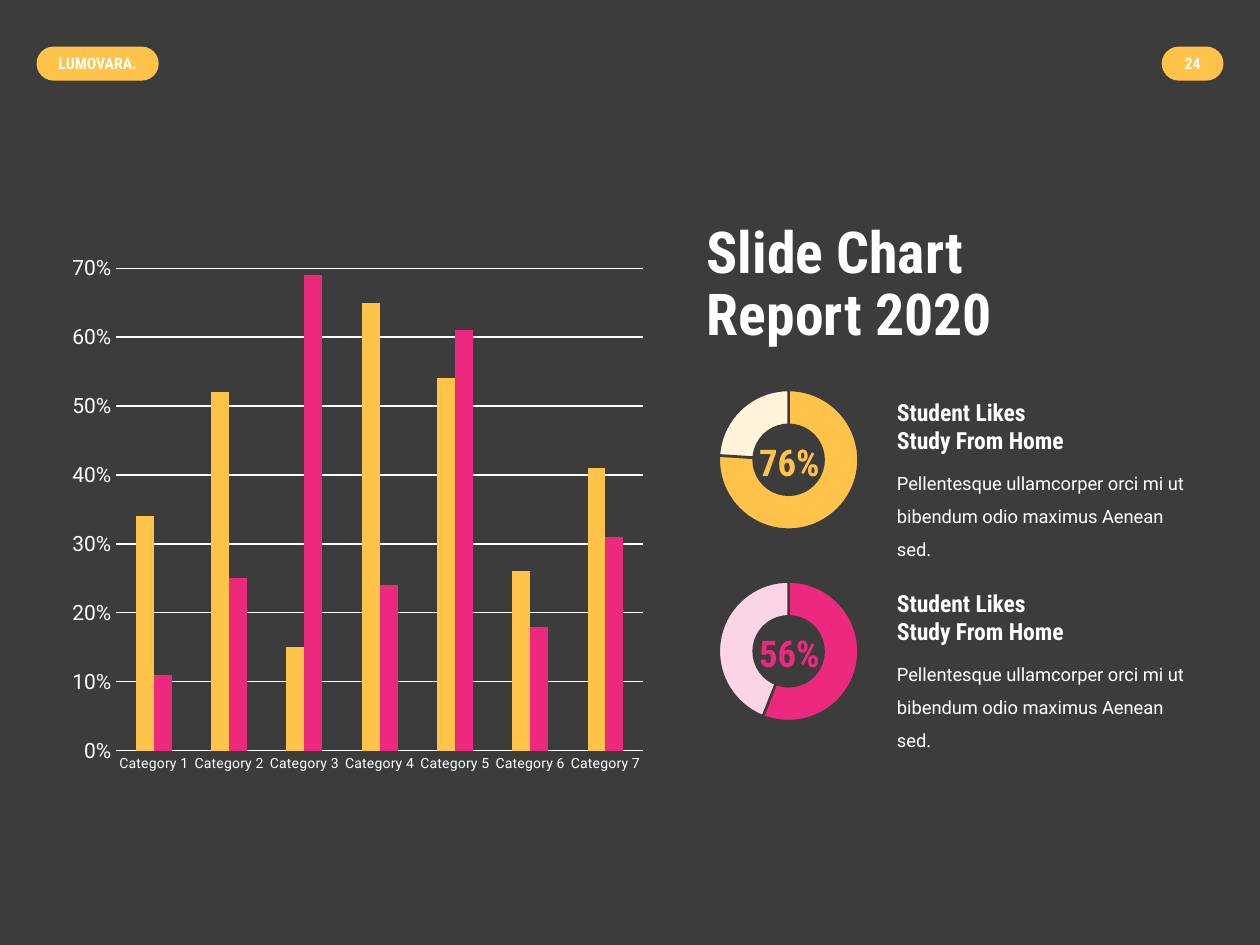
import dataclasses
import typing

import pptx
import pptx.chart.data
import pptx.dml.color
import pptx.enum.chart
import pptx.enum.shapes
import pptx.enum.text
import pptx.oxml
import pptx.oxml.ns
import pptx.util

COLS, ROWS = 100, 75
DARK, WHITE, GOLD, PINK = "3C3C3C", "FFFFFF", "FFC34A", "EC297C"
HEAD, BODY = "Roboto Condensed", "Roboto"
ALIGN = pptx.enum.text.PP_ALIGN
ANCHOR = pptx.enum.text.MSO_ANCHOR
KIND = pptx.enum.chart.XL_CHART_TYPE
TICK = pptx.enum.chart.XL_TICK_MARK

deck = pptx.Presentation()
deck.slide_width = pptx.util.Inches(10)
deck.slide_height = pptx.util.Inches(7.5)
slide = deck.slides.add_slide(deck.slide_layouts[5])


class Box(typing.NamedTuple):
    col: float
    row: float
    wide: float
    high: float

    def place(self) -> tuple:
        unit_x, unit_y = deck.slide_width / COLS, deck.slide_height / ROWS
        return (round(self.col * unit_x), round(self.row * unit_y),
                round(self.wide * unit_x), round(self.high * unit_y))


@dataclasses.dataclass
class Style:
    size: float
    font: str = HEAD
    color: str = WHITE
    bold: bool = True
    align: typing.Any = ALIGN.LEFT
    space: float = 1.0


@dataclasses.dataclass
class Badge:
    box: Box
    label: str


@dataclasses.dataclass
class Ring:
    row: float
    share: int
    color: str
    pale: str


BADGES = [Badge(Box(2.9, 3.7, 9.7, 2.7), "LUMOVARA."),
          Badge(Box(92.2, 3.7, 4.9, 2.7), "24")]
RINGS = [Ring(29.5, 76, GOLD, "FFF3DB"), Ring(44.7, 56, PINK, "FBD4E5")]
BARS = [("Series 1", GOLD, (0.34, 0.52, 0.15, 0.65, 0.54, 0.26, 0.41)),
        ("Series 2", PINK, (0.11, 0.25, 0.69, 0.24, 0.61, 0.18, 0.31))]
BLURB = "Pellentesque ullamcorper orci mi ut bibendum odio maximus Aenean sed."


def tint(code: str) -> pptx.dml.color.RGBColor:
    return pptx.dml.color.RGBColor.from_string(code)


def apply(item: typing.Any, **values: typing.Any) -> None:
    for name, value in values.items():
        setattr(item, name, value)


def paint(fill: typing.Any, code: str) -> None:
    fill.solid()
    fill.fore_color.rgb = tint(code)


def ink(font: typing.Any, style: Style) -> None:
    apply(font, name=style.font, size=pptx.util.Pt(style.size), bold=style.bold)
    font.color.rgb = tint(style.color)


def stroke(line: typing.Any, code: str, width: float) -> None:
    line.color.rgb = tint(code)
    line.width = pptx.util.Pt(width)


def write(shape: typing.Any, text: str, style: Style, **frame: typing.Any) -> None:
    apply(shape.text_frame, **({"word_wrap": True} | frame))
    shape.text_frame.text = text
    for para in shape.text_frame.paragraphs:
        apply(para, alignment=style.align, line_spacing=style.space)
        for run in para.runs:
            ink(run.font, style)


def add_text(box: Box, text: str, style: Style, **frame: typing.Any) -> None:
    write(slide.shapes.add_textbox(*box.place()), text, style, **frame)


def add_badge(badge: Badge) -> None:
    pill = slide.shapes.add_shape(
        pptx.enum.shapes.MSO_SHAPE.ROUNDED_RECTANGLE, *badge.box.place())
    pill.adjustments[0] = 0.5
    pill.shadow.inherit = False
    paint(pill.fill, GOLD)
    pill.line.fill.background()
    write(pill, badge.label, Style(9, align=ALIGN.CENTER), margin_top=0,
          margin_bottom=0, vertical_anchor=ANCHOR.MIDDLE)


def set_plot(chart: typing.Any, area: Box) -> None:
    tags = "".join(f'<c:{tag} val="{value}"/>' for tag, value in (
        ("layoutTarget", "inner"), ("xMode", "edge"), ("yMode", "edge"),
        *zip("xywh", area)))
    space = pptx.oxml.ns.nsdecls("c")
    plot = chart.plots[0]._element.getparent()
    for old in plot.findall(pptx.oxml.ns.qn("c:layout")):
        plot.remove(old)
    plot.insert(0, pptx.oxml.parse_xml(
        f"<c:layout {space}><c:manualLayout>{tags}</c:manualLayout></c:layout>"))


def add_chart(kind: typing.Any, box: Box, cats: list, rows: list, area: Box) -> typing.Any:
    data = pptx.chart.data.CategoryChartData()
    data.categories = cats
    for name, values in rows:
        data.add_series(name, values)
    chart = slide.shapes.add_chart(kind, *box.place(), data).chart
    apply(chart, has_legend=False, has_title=False)
    ink(chart.font, Style(10, BODY, bold=False))
    set_plot(chart, area)
    return chart


def add_bars() -> None:
    cats = [f"Category {num}" for num in range(1, 8)]
    chart = add_chart(KIND.COLUMN_CLUSTERED, Box(5.6, 16.3, 45.5, 45.1), cats,
                      [(name, values) for name, _, values in BARS],
                      Box(0.08, 0.05, 0.92, 0.91))
    apply(chart.plots[0], gap_width=219, overlap=0, vary_by_categories=False)
    for series, (_, color, _) in zip(chart.plots[0].series, BARS):
        paint(series.format.fill, color)
    for axis, size in ((chart.category_axis, 8), (chart.value_axis, 12)):
        apply(axis, major_tick_mark=TICK.NONE, minor_tick_mark=TICK.NONE)
        ink(axis.tick_labels.font, Style(size, BODY, bold=False))
    stroke(chart.category_axis.format.line, WHITE, 0.75)
    value = chart.value_axis
    apply(value, minimum_scale=0, maximum_scale=0.75, major_unit=0.1,
          has_major_gridlines=True)
    apply(value.tick_labels, number_format="0%", number_format_is_linked=False)
    stroke(value.major_gridlines.format.line, WHITE, 0.75)
    value.format.line.fill.background()


def add_ring(ring: Ring) -> None:
    chart = add_chart(KIND.DOUGHNUT, Box(55.1, ring.row, 15, 14), ["1", "2"],
                      [("Series 1", (ring.share, 100 - ring.share))],
                      Box(0.13, 0.1, 0.74, 0.8))
    plot = chart.plots[0]
    plot.has_data_labels = False
    plot._element.find(pptx.oxml.ns.qn("c:holeSize")).set("val", "75")
    for num, color in enumerate((ring.color, ring.pale)):
        look = plot.series[0].points[num].format
        paint(look.fill, color)
        stroke(look.line, DARK, 1.5)
    add_text(Box(57.9, ring.row + 4.9, 9.5, 4.5), f"{ring.share}%",
             Style(21, color=ring.color, align=ALIGN.CENTER))
    add_text(Box(70.2, ring.row + 1.55, 15.5, 5.6),
             "Student Likes\nStudy From Home", Style(13.5), word_wrap=False)
    add_text(Box(70.2, ring.row + 6.6, 26.1, 6), BLURB,
             Style(10.5, BODY, bold=False, space=1.5))


def main() -> None:
    paint(slide.background.fill, DARK)
    title = slide.shapes.title
    sides = zip(("left", "top", "width", "height"), Box(55.1, 14.8, 56.3, 15.8).place())
    apply(title, **dict(sides))
    write(title, "Slide Chart\vReport 2020", Style(33, space=0.9),
          vertical_anchor=ANCHOR.MIDDLE, auto_size=pptx.enum.text.MSO_AUTO_SIZE.NONE)
    for badge in BADGES:
        add_badge(badge)
    add_bars()
    for ring in RINGS:
        add_ring(ring)
    deck.save("out.pptx")


if __name__ == "__main__":
    main()
